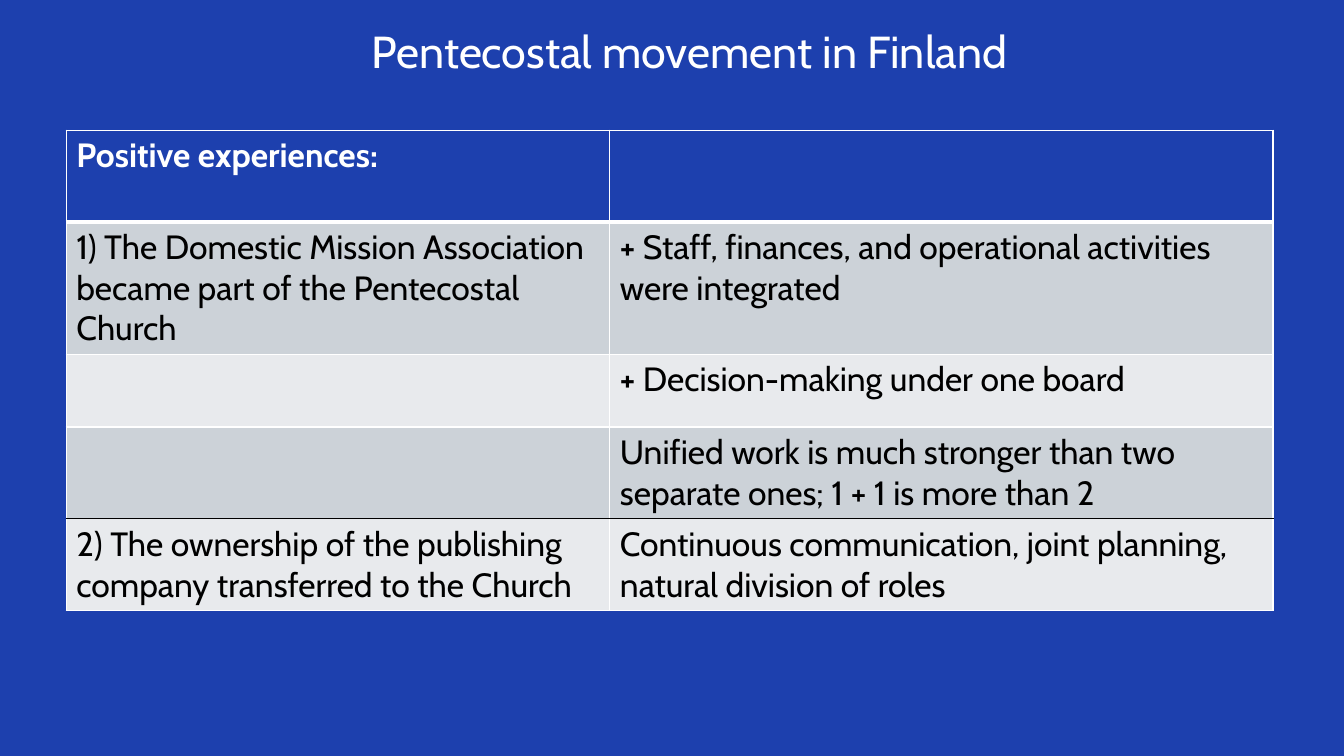
from dataclasses import dataclass

from lxml import etree
from pptx import Presentation
from pptx import util as u
from pptx.dml.color import RGBColor
from pptx.enum import text
from pptx.oxml.ns import qn


@dataclass(frozen=True)
class Theme:
    font: str = "Cabin"
    title_size: int = 32
    body_size: int = 24
    blue: str = "1D40AE"
    white: str = "FFFFFF"
    black: str = "000000"
    band_dark: str = "CCD2D8"
    band_light: str = "E8EAED"


THEME = Theme()

COL_WIDTHS = (13.7, 16.71)
ROW_HEIGHTS = (2.31, 3.3, 1.83, 2.31, 2.31)
DIVIDER_ROW = 4  # the second experience starts here, below a black line

# Each cell is a list of (text, bold) runs
ROWS = [
    ([("Positive experiences:", True)], []),
    ([("1) The Domestic Mission Association became part of the Pentecostal Church", False)],
     [("+ ", True), ("Staff, finances, and operational activities were integrated", False)]),
    ([], [("+ ", True), ("Decision-making under one board", False)]),
    ([], [("Unified work is much stronger than two separate ones; 1 + 1 is more than 2", False)]),
    ([("2) The ownership of the publishing company transferred to the Church", False)],
     [("Continuous communication, joint planning, natural division of roles", False)]),
]


def add_run(p, words, size, color, bold=False):
    r = p.add_run()
    r.text = words
    r.font.name = THEME.font
    r.font.size = u.Pt(size)
    r.font.bold = bold
    r.font.color.rgb = RGBColor.from_string(color)


def add_title(slide, words):
    sp = slide.shapes.title
    sp.left, sp.top, sp.width, sp.height = u.Cm(7.7), u.Cm(0.46), u.Cm(19.35), u.Cm(1.63)
    tf = sp.text_frame
    tf.word_wrap = True
    tf.auto_size = text.MSO_AUTO_SIZE.NONE
    tf.vertical_anchor = text.MSO_ANCHOR.MIDDLE
    p = tf.paragraphs[0]
    p.alignment = text.PP_ALIGN.CENTER
    add_run(p, words, THEME.title_size, THEME.white)


def set_border(cell, side, color, points):
    tc_pr = cell._tc.get_or_add_tcPr()
    ln = etree.SubElement(tc_pr, qn(f"a:ln{side}"), w=str(u.Pt(points)))
    fill = etree.SubElement(ln, qn("a:solidFill"))
    etree.SubElement(fill, qn("a:srgbClr"), val=color)


def row_line(index):
    """Colour and width of the horizontal line above a row."""
    if index == 1:
        return THEME.white, 3
    return (THEME.black if index == DIVIDER_ROW else THEME.white), 1


def format_cell(cell, row, runs):
    # Borders come before the fill
    for side in "LR":
        set_border(cell, side, THEME.white, 1)
    set_border(cell, "T", *row_line(row))
    set_border(cell, "B", *row_line(row + 1))
    band = THEME.band_dark if row % 2 else THEME.band_light
    cell.fill.solid()
    cell.fill.fore_color.rgb = RGBColor.from_string(band if row else THEME.blue)
    p = cell.text_frame.paragraphs[0]
    for words, bold in runs:
        add_run(p, words, THEME.body_size, THEME.black if row else THEME.white, bold)


def add_experience_table(slide):
    frame = slide.shapes.add_table(
        len(ROWS), len(COL_WIDTHS), u.Cm(1.67), u.Cm(3.28),
        u.Cm(sum(COL_WIDTHS)), u.Cm(sum(ROW_HEIGHTS)))
    table = frame.table
    for column, width in zip(table.columns, COL_WIDTHS):
        column.width = u.Cm(width)
    for row, height in zip(table.rows, ROW_HEIGHTS):
        row.height = u.Cm(height)
    for i, cells in enumerate(ROWS):
        for j, runs in enumerate(cells):
            format_cell(table.cell(i, j), i, runs)


def main():
    prs = Presentation()
    prs.slide_width, prs.slide_height = u.Cm(33.87), u.Cm(19.05)
    slide = prs.slides.add_slide(prs.slide_layouts[5])

    # Blue background
    slide.background.fill.solid()
    slide.background.fill.fore_color.rgb = RGBColor.from_string(THEME.blue)

    # Title and table
    add_title(slide, "Pentecostal movement in Finland")
    add_experience_table(slide)
    prs.save("out.pptx")


if __name__ == "__main__":
    main()
